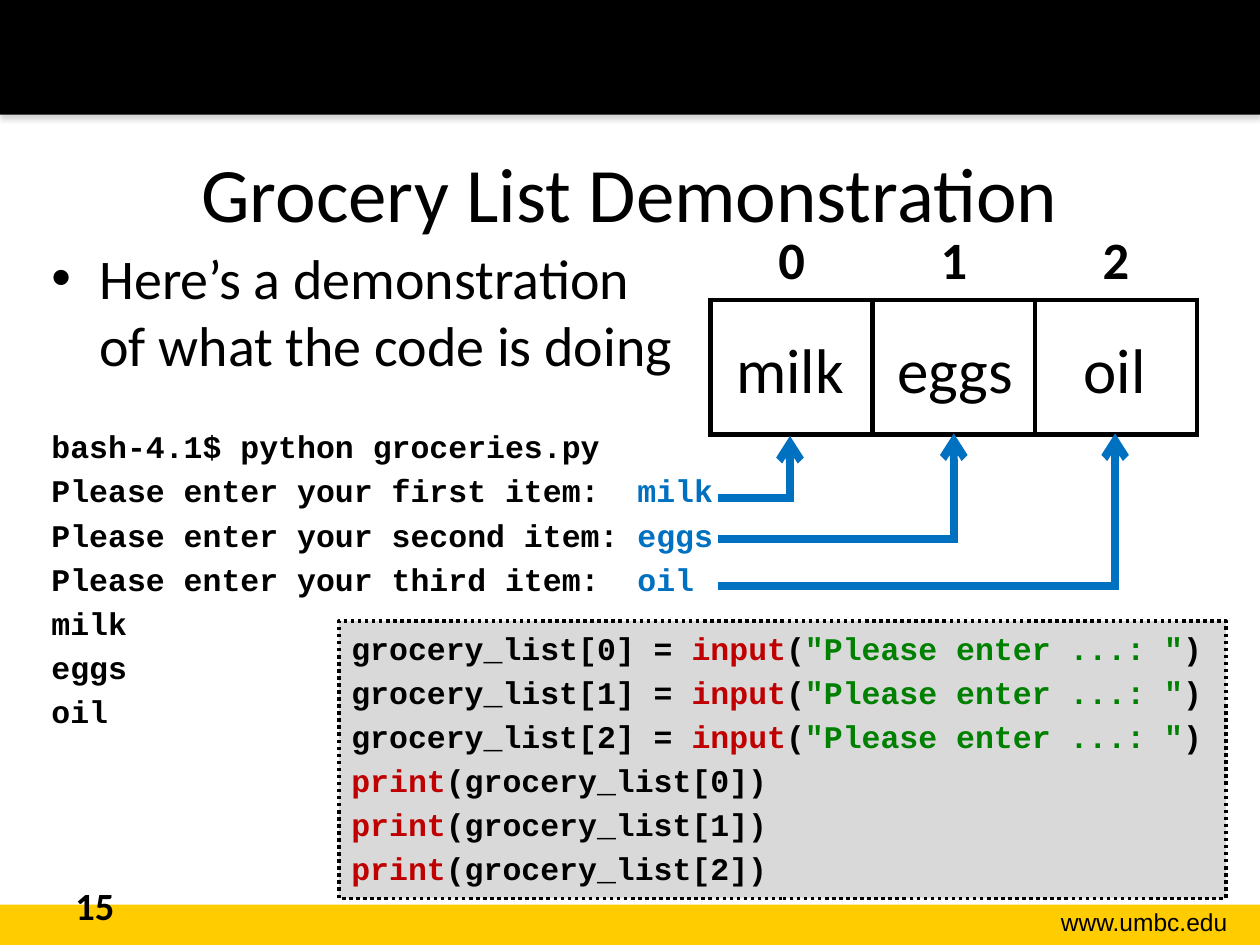
"""Build the grocery list demonstration slide."""
import lxml.etree
import pptx
import pptx.dml.color
import pptx.enum.dml
import pptx.enum.shapes
import pptx.enum.text
import pptx.oxml.ns
import pptx.util

Inches = pptx.util.Inches
Pt = pptx.util.Pt
RGBColor = pptx.dml.color.RGBColor
ALIGN = pptx.enum.text.PP_ALIGN
ANCHOR = pptx.enum.text.MSO_ANCHOR
SHAPE = pptx.enum.shapes.MSO_SHAPE

BLACK = RGBColor(0, 0, 0)
WHITE = RGBColor(255, 255, 255)
GOLD = RGBColor(0xFF, 0xCC, 0x00)
GRAY = RGBColor(0xD9, 0xD9, 0xD9)
BLUE = RGBColor(0x00, 0x70, 0xC0)
RED = RGBColor(0xC0, 0, 0)
GREEN = RGBColor(0, 0x80, 0)


def add_tag(parent, tag, **attrs):
    node = lxml.etree.SubElement(parent, pptx.oxml.ns.qn(tag))
    for key, value in attrs.items():
        node.set(key, str(value))
    return node


def write(para, text, font="Calibri", size=18, bold=False, color=BLACK,
          align=ALIGN.LEFT, before=None):
    """Add text, or a list of (text, color) runs, to a paragraph."""
    para.alignment = align
    if before is not None:
        para.space_before = Pt(before)
    runs = [(text, color)] if isinstance(text, str) else text
    for words, tint in runs:
        for row, part in enumerate(words.split("\n")):
            if row:
                para.add_line_break()
            run = para.add_run()
            run.text = part
            run.font.name = font
            run.font.size = Pt(size)
            run.font.bold = bold
            run.font.color.rgb = tint


class Deck:
    def __init__(self):
        self.show = pptx.Presentation()
        self.show.slide_width = Inches(10)
        self.show.slide_height = Inches(7.5)
        self.slide = self.show.slides.add_slide(self.show.slide_layouts[6])
        self.code = dict(font="Courier New", size=18, bold=True)
        self.gap = 3.6

    def bar(self, top, height, color, left=0, width=10):
        box = self.slide.shapes.add_shape(
            SHAPE.RECTANGLE, Inches(left), Inches(top), Inches(width), Inches(height))
        box.shadow.inherit = False
        box.fill.solid()
        box.fill.fore_color.rgb = color
        box.line.fill.background()
        return box

    def shade(self, box):
        glow = box._element.spPr.find(pptx.oxml.ns.qn("a:effectLst"))
        outer = add_tag(glow, "a:outerShdw", blurRad=Pt(3.1), dist=Pt(1.8),
                        dir=5400000, rotWithShape=0)
        tint = add_tag(outer, "a:srgbClr", val="808080")
        add_tag(tint, "a:alpha", val=35000)

    def label(self, text, left, top, width, height, anchor=ANCHOR.TOP, **style):
        box = self.slide.shapes.add_textbox(
            Inches(left), Inches(top), Inches(width), Inches(height))
        frame = box.text_frame
        frame.word_wrap = True
        frame.vertical_anchor = anchor
        write(frame.paragraphs[0], text, **style)
        return frame

    def bullet(self, para, indent):
        props = para._p.get_or_add_pPr()
        props.set("marL", str(Inches(indent)))
        props.set("indent", str(Inches(-indent)))
        add_tag(props, "a:buFont", typeface="Arial")
        add_tag(props, "a:buChar", char="•")

    def add_code(self, frame, lines, first):
        for row, line in enumerate(lines):
            write(frame.add_paragraph(), line,
                  before=self.gap if row else first, **self.code)

    def panel(self, lines, left, top, width, height):
        box = self.bar(top, height, GRAY, left, width)
        box.line.color.rgb = BLACK
        box.line.width = Pt(2)
        box.line.dash_style = pptx.enum.dml.MSO_LINE.ROUND_DOT
        frame = box.text_frame
        frame.word_wrap = True
        frame.vertical_anchor = ANCHOR.MIDDLE
        frame.margin_bottom = Inches(0.08)
        write(frame.paragraphs[0], lines[0], **self.code)
        self.add_code(frame, lines[1:], self.gap)

    def edge(self, cell, sides):
        props = cell._tc.get_or_add_tcPr()
        for side in "LRTB":
            if side in sides:
                line = add_tag(props, "a:ln" + side, w=Pt(3))
                add_tag(add_tag(line, "a:solidFill"), "a:srgbClr", val=BLACK)
            else:
                add_tag(add_tag(props, "a:ln" + side, w=0), "a:noFill")

    def grid(self, heads, left, top, width, heights):
        frame = self.slide.shapes.add_table(
            2, len(heads), Inches(left), Inches(top),
            Inches(width), Inches(sum(heights)))
        table = frame.table
        table.first_row = table.horz_banding = False
        plain = "{2D5ABB26-0587-4C30-8999-92F81FD0307C}"
        table._tbl.tblPr.find(pptx.oxml.ns.qn("a:tableStyleId")).text = plain
        for row, height in zip(table.rows, heights):
            row.height = Inches(height)
        for col, head in enumerate(heads):
            cell, slot = table.cell(0, col), table.cell(1, col)
            self.edge(cell, "B")
            cell.fill.background()
            cell.vertical_anchor = ANCHOR.BOTTOM
            write(cell.text_frame.paragraphs[0], head, size=30, bold=True,
                  align=ALIGN.CENTER)
            self.edge(slot, "LRTB")
            slot.fill.solid()
            slot.fill.fore_color.rgb = WHITE

    def line(self, start, end, arrow=False):
        link = self.slide.shapes.add_connector(
            pptx.enum.shapes.MSO_CONNECTOR.STRAIGHT,
            *[Inches(value) for value in start + end])
        link.line.color.rgb = BLUE
        link.line.width = Pt(4.5)
        if arrow:
            add_tag(link.line._get_or_add_ln(), "a:tailEnd", type="arrow")
        add_tag(link._element.spPr, "a:effectLst")


def main():
    deck = Deck()
    deck.bar(7.18, 0.32, GOLD)
    deck.shade(deck.bar(0, 0.91, BLACK))
    deck.label("www.umbc.edu", 7.85, 7.15, 1.99, 0.34, font="Arial", size=14,
               align=ALIGN.RIGHT)
    deck.label("Grocery List Demonstration", 0.5, 0.9, 9, 1.25,
               anchor=ANCHOR.MIDDLE, size=44, align=ALIGN.CENTER)

    body = deck.label("Here’s a demonstration\nof what the code is doing",
                      0.31, 1.88, 9.58, 4.55, size=32)
    deck.bullet(body.paragraphs[0], 0.38)
    asks = [("Please enter your first item:  ", "milk"),
            ("Please enter your second item: ", "eggs"),
            ("Please enter your third item:  ", "oil")]
    shell = ["bash-4.1$ python groceries.py"]
    shell += [[(ask, BLACK), (item, BLUE)] for ask, item in asks]
    shell += [item for _, item in asks]
    deck.add_code(body, shell, 28.5)
    deck.label("15", 0.5, 6.95, 2.33, 0.4, size=22, bold=True)

    deck.grid("012", 5.64, 1.63, 3.86, (0.75, 1.07))
    places = [(5.64, 1.26, 6.27, 3.95, 3.46),
              (6.95, 1.26, 7.57, 4.28, 3.44),
              (8.34, 1.01, 8.85, 4.65, 3.44)]
    for (_, item), (left, width, turn, low, tip) in zip(asks, places):
        deck.label(item, left, 2.57, width, 0.71, size=36, align=ALIGN.CENTER)
        deck.line((turn, low), (turn, tip), arrow=True)
        deck.line((5.7, low), (turn + 0.03, low))

    reads = [[(f"grocery_list[{spot}] = ", BLACK), ("input", RED), ("(", BLACK),
              ('"Please enter ...: "', GREEN), (")", BLACK)] for spot in range(3)]
    prints = [[("print", RED), (f"(grocery_list[{spot}])", BLACK)]
              for spot in range(3)]
    deck.panel(reads + prints, 2.69, 4.93, 7.04, 2.2)
    deck.show.save("out.pptx")


if __name__ == "__main__":
    main()
